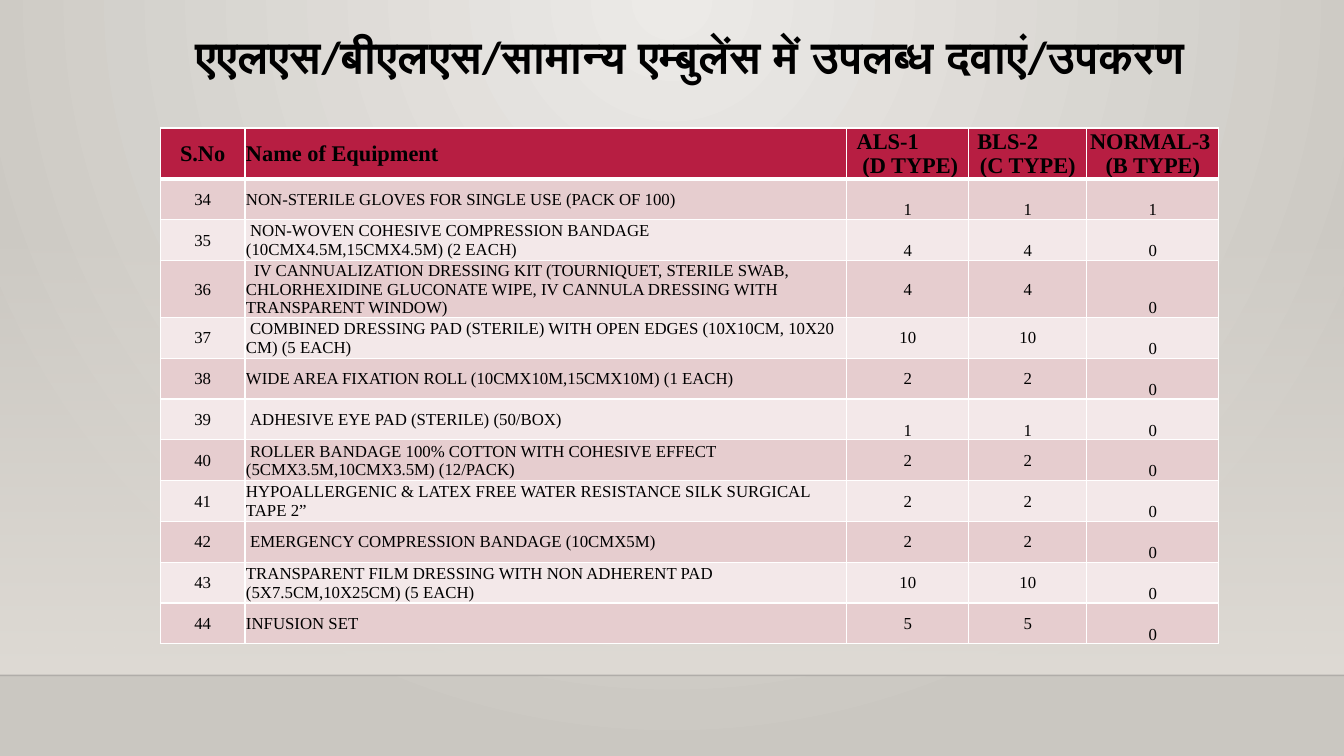
"""Build a slide listing ambulance equipment 34 to 44 by vehicle type."""
from dataclasses import dataclass

import lxml.etree
import pptx
import pptx.dml.color
import pptx.enum.shapes
import pptx.enum.text
import pptx.oxml.ns
import pptx.util

HEADING = "एएलएस/बीएलएस/सामान्य एम्बुलेंस में उपलब्ध दवाएं/उपकरण"
COLUMN_NAMES = ("S.No", "Name of Equipment", "ALS-1\n(D TYPE)",
                "BLS-2\n(C TYPE)", "NORMAL-3\n(B TYPE)")
FIRST_NUMBER = 34
EQUIPMENT = [
    ("NON-STERILE GLOVES FOR SINGLE USE (PACK OF 100)", 1, 1, 1),
    ("NON-WOVEN COHESIVE COMPRESSION BANDAGE (10CMX4.5M,15CMX4.5M) (2 EACH)", 4, 4, 0),
    ("IV CANNUALIZATION DRESSING KIT (TOURNIQUET, STERILE SWAB, CHLORHEXIDINE "
     "GLUCONATE WIPE, IV CANNULA DRESSING WITH TRANSPARENT WINDOW)", 4, 4, 0),
    ("COMBINED DRESSING PAD (STERILE) WITH OPEN EDGES (10X10CM, 10X20 CM) (5 EACH)", 10, 10, 0),
    ("WIDE AREA FIXATION ROLL (10CMX10M,15CMX10M) (1 EACH)", 2, 2, 0),
    ("ADHESIVE EYE PAD (STERILE) (50/BOX)", 1, 1, 0),
    ("ROLLER BANDAGE 100% COTTON WITH COHESIVE EFFECT (5CMX3.5M,10CMX3.5M) (12/PACK)", 2, 2, 0),
    ("HYPOALLERGENIC & LATEX FREE WATER RESISTANCE SILK SURGICAL TAPE 2”", 2, 2, 0),
    ("EMERGENCY COMPRESSION BANDAGE (10CMX5M)", 2, 2, 0),
    ("TRANSPARENT FILM DRESSING WITH NON ADHERENT PAD (5X7.5CM,10X25CM) (5 EACH)", 10, 10, 0),
    ("INFUSION SET", 5, 5, 0),
]
NAME_INDENTS = {35: 0.04, 36: 0.08, 37: 0.04, 39: 0.04, 40: 0.04, 42: 0.04}
HEADER_RIGHT_INDENTS = {2: 0.4, 3: 0.4, 4: 0.05}
HEADER_LEFT_INDENT = 0.05
LOW_COUNT_NUMBERS = (34, 35, 39)

WIDTH, HEIGHT = 13.33, 7.5
COLUMN_WIDTHS = (0.84, 5.97, 1.21, 1.17, 1.31)
LEFT, TABLE_TOP, TABLE_HEIGHT = 1.59, 1.27, 4.86
TITLE_TOP, TITLE_HEIGHT = 0.29, 1.15
WALL_TOP, FLOOR_TOP = 2.21, 6.7


@dataclass(frozen=True)
class Theme:
    ink: str = "000000"
    accent: str = "B71E42"
    bands: tuple = ("E6CDCF", "F3E8E9")
    rule: str = "FFFFFF"
    glow: tuple = ("ECEAE7", "CAC7C1")
    wall: str = "DFDBD5"
    floor_edge: str = "000001"
    title_font: str = "Calibri"
    table_font: str = "Times New Roman"
    title_size: int = 32
    header_size: int = 16
    body_size: int = 12


THEME = Theme()
inches = pptx.util.Inches
Anchor = pptx.enum.text.MSO_ANCHOR
Align = pptx.enum.text.PP_ALIGN


def rgb(code):
    return pptx.dml.color.RGBColor.from_string(code)


def add_child(parent, tag, **attributes):
    child = lxml.etree.SubElement(parent, pptx.oxml.ns.qn(tag))
    for key, setting in attributes.items():
        child.set(key, str(setting))
    return child


def style_font(font, family, size, bold):
    font.name, font.size, font.bold = family, pptx.util.Pt(size), bold
    font.color.rgb = rgb(THEME.ink)


def set_margins(paragraph, left=0, right=0, first_line=0):
    properties = paragraph._p.get_or_add_pPr()
    for key, length in (("marL", left), ("marR", right), ("indent", first_line)):
        properties.set(key, str(inches(length)))


def fill_gradient(fill, colours):
    fill.gradient()
    for stop, colour in zip(fill.gradient_stops, colours):
        stop.color.rgb = rgb(colour)


def paint_backdrop(slide):
    fill_gradient(slide.background.fill, THEME.glow)
    glow = slide.element.xpath(".//p:bg//a:gradFill")[0]
    for linear in glow.xpath("./a:lin"):
        glow.remove(linear)
    circle = add_child(glow, "a:path", path="circle")
    add_child(circle, "a:fillToRect", l=43000, t=0, r=43000, b=100000)

    wall = slide.shapes.add_shape(
        pptx.enum.shapes.MSO_SHAPE.RECTANGLE, 0, inches(WALL_TOP),
        inches(WIDTH), inches(FLOOR_TOP - WALL_TOP))
    wall.shadow.inherit = False
    wall.line.fill.background()
    fill_gradient(wall.fill, (THEME.wall, THEME.wall))
    wall.fill.gradient_angle = 270
    add_child(wall.element.xpath(".//a:gs/a:srgbClr")[0], "a:alpha", val=0)

    edge = slide.shapes.add_connector(
        pptx.enum.shapes.MSO_CONNECTOR.STRAIGHT, 0, inches(FLOOR_TOP),
        inches(WIDTH), inches(FLOOR_TOP))
    edge.line.color.rgb = rgb(THEME.floor_edge)
    edge.line.width = pptx.util.Pt(1)
    add_child(edge.element.xpath(".//a:ln//a:srgbClr")[0], "a:alpha", val=20000)
    add_child(edge.element.spPr, "a:effectLst")


def set_heading(slide):
    title = slide.shapes.title
    title.left, title.top = inches(LEFT), inches(TITLE_TOP)
    title.width, title.height = inches(sum(COLUMN_WIDTHS)), inches(TITLE_HEIGHT)
    title.text_frame.text = HEADING
    title.text_frame.vertical_anchor = Anchor.TOP
    paragraph = title.text_frame.paragraphs[0]
    paragraph.alignment, paragraph.line_spacing = Align.CENTER, 0.9
    style_font(paragraph.runs[0].font, THEME.title_font, THEME.title_size, True)


def set_cell(cell, row, column, text):
    number = FIRST_NUMBER + row - 1
    is_header = row == 0
    cell.margin_left = cell.margin_right = cell.margin_top = inches(0.01)
    cell.margin_bottom = 0
    low = column == 4 or (column in (2, 3) and not is_header and number in LOW_COUNT_NUMBERS)
    cell.vertical_anchor = Anchor.BOTTOM if low else Anchor.MIDDLE
    widths = {"L": 1, "R": 1, "T": 3 if row == 1 else 1, "B": 3 if is_header else 1}
    for side, points in widths.items():
        border = add_child(cell._tc.get_or_add_tcPr(), f"a:ln{side}", w=pptx.util.Pt(points))
        add_child(add_child(border, "a:solidFill"), "a:srgbClr", val=THEME.rule)
    cell.fill.solid()
    cell.fill.fore_color.rgb = rgb(THEME.accent if is_header else THEME.bands[(row - 1) % 2])

    cell.text_frame.text = str(text)
    for line, paragraph in enumerate(cell.text_frame.paragraphs):
        paragraph.alignment = Align.LEFT if column == 1 else Align.CENTER
        size = THEME.header_size if is_header else THEME.body_size
        style_font(paragraph.runs[0].font, THEME.table_font, size, is_header)
        if is_header and line == 0:
            set_margins(paragraph, right=HEADER_RIGHT_INDENTS.get(column, 0))
        elif is_header:
            set_margins(paragraph, left=HEADER_LEFT_INDENT if column == 2 else 0)
        elif column == 1:
            set_margins(paragraph, first_line=NAME_INDENTS.get(number, 0))


def add_equipment(slide):
    rows = [COLUMN_NAMES] + [(FIRST_NUMBER + i, *item) for i, item in enumerate(EQUIPMENT)]
    table = slide.shapes.add_table(
        len(rows), len(COLUMN_NAMES), inches(LEFT), inches(TABLE_TOP),
        inches(sum(COLUMN_WIDTHS)), inches(TABLE_HEIGHT)).table
    for column, width in zip(table.columns, COLUMN_WIDTHS):
        column.width = inches(width)
    for row, entries in enumerate(rows):
        table.rows[row].height = inches(TABLE_HEIGHT / len(rows))
        for column, text in enumerate(entries):
            set_cell(table.cell(row, column), row, column, text)


def main():
    deck = pptx.Presentation()
    deck.slide_width, deck.slide_height = inches(WIDTH), inches(HEIGHT)
    slide = deck.slides.add_slide(deck.slide_layouts[5])
    paint_backdrop(slide)
    set_heading(slide)
    add_equipment(slide)
    deck.save("out.pptx")


if __name__ == "__main__":
    main()
